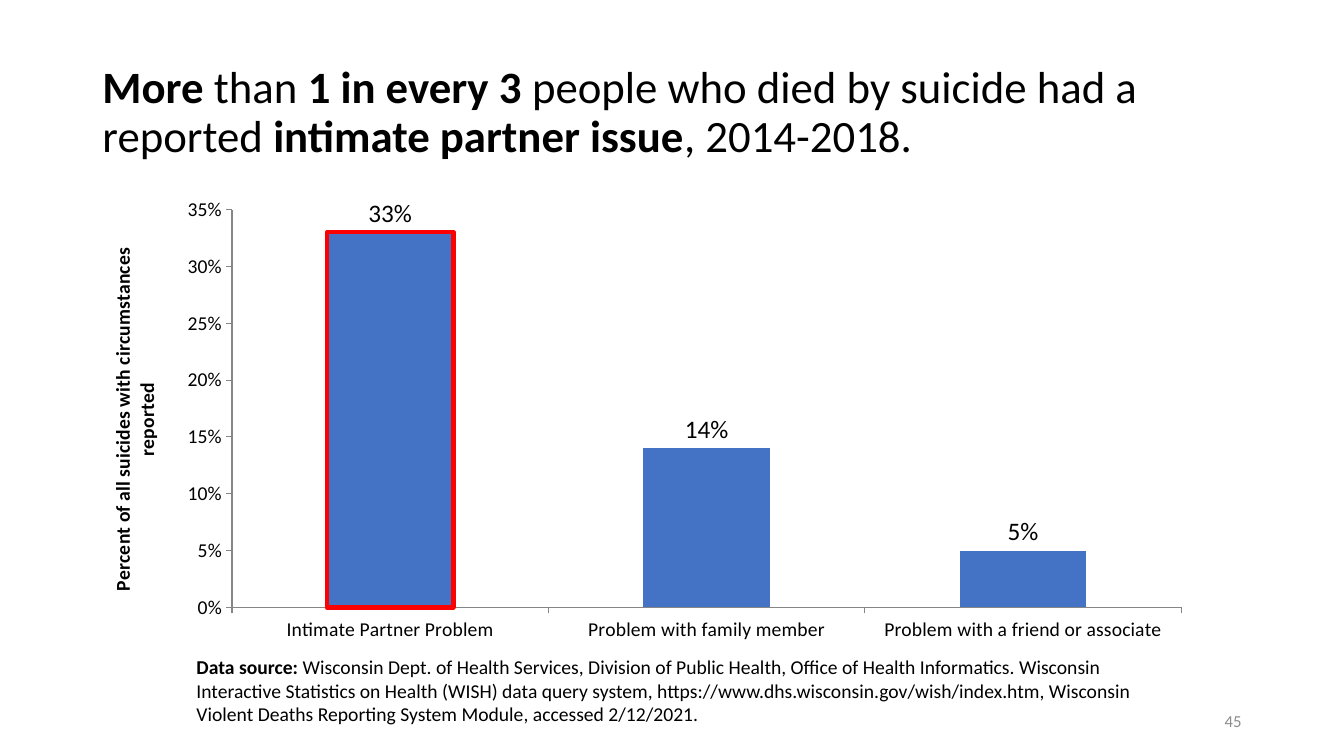
import pptx
import pptx.chart.data
import pptx.dml.color
import pptx.enum.chart
import pptx.enum.text
import pptx.oxml
import pptx.oxml.ns
import pptx.util

Pt = pptx.util.Pt
FONT = "Calibri"
BLACK, GRAY, BLUE, RED, AXIS_GRAY = "000000", "8C8C8C", "4472C4", "FF0000", "868686"


def color(hex_string):
    return pptx.dml.color.RGBColor.from_string(hex_string)


def style_font(font, size, bold=False, hex_color=BLACK):
    font.name = FONT
    font.size = Pt(size)
    font.bold = bold
    font.color.rgb = color(hex_color)


def add_runs(paragraph, runs, size, hex_color=BLACK):
    for text, bold in runs:
        run = paragraph.add_run()
        run.text = text
        style_font(run.font, size, bold, hex_color)


def place(shape, box):
    shape.left, shape.top, shape.width, shape.height = (Pt(length) for length in box)


def build_title(slide, box):
    title = slide.shapes.title
    place(title, box)
    title.text_frame.vertical_anchor = pptx.enum.text.MSO_ANCHOR.MIDDLE
    title.text_frame.word_wrap = True
    paragraph = title.text_frame.paragraphs[0]
    paragraph.alignment = pptx.enum.text.PP_ALIGN.LEFT
    paragraph.line_spacing = 0.9
    add_runs(paragraph, [
        ("More", True),
        (" than ", False),
        ("1 in every 3 ", True),
        ("people who died by suicide had a reported ", False),
        ("intimate partner issue", True),
        (", 2014-2018.", False),
    ], 32)


def set_plot_layout(chart, left, top, width, height):
    """Fix the inner plot area, in fractions of the chart."""
    plot_area = chart.plots[0]._element.getparent()
    for layout in plot_area.findall(pptx.oxml.ns.qn("c:layout")):
        plot_area.remove(layout)
    plot_area.insert(0, pptx.oxml.parse_xml(
        f'<c:layout {pptx.oxml.ns.nsdecls("c")}><c:manualLayout>'
        '<c:layoutTarget val="inner"/><c:xMode val="edge"/><c:yMode val="edge"/>'
        f'<c:x val="{left}"/><c:y val="{top}"/><c:w val="{width}"/><c:h val="{height}"/>'
        '</c:manualLayout></c:layout>'))


def build_chart(slide, box):
    data = pptx.chart.data.CategoryChartData(number_format="0%")
    data.categories = ["Intimate Partner Problem", "Problem with family member",
                       "Problem with a friend or associate"]
    data.add_series("Series 1", [0.33, 0.14, 0.05])
    chart = slide.shapes.add_chart(
        pptx.enum.chart.XL_CHART_TYPE.COLUMN_CLUSTERED,
        *(Pt(length) for length in box), data).chart
    chart.has_legend = False
    chart.has_title = False
    style_font(chart.font, 18)
    set_plot_layout(chart, 0.13, 0.05, 0.85, 0.86)

    # Axes
    for axis in (chart.category_axis, chart.value_axis):
        axis.has_major_gridlines = False
        axis.major_tick_mark = pptx.enum.chart.XL_TICK_MARK.OUTSIDE
        axis.minor_tick_mark = pptx.enum.chart.XL_TICK_MARK.NONE
        axis.format.line.color.rgb = color(AXIS_GRAY)
        axis.format.line.width = Pt(0.75)
        style_font(axis.tick_labels.font, 14)
    value_axis = chart.value_axis
    value_axis.minimum_scale = 0
    value_axis.maximum_scale = 0.35
    value_axis.major_unit = 0.05
    value_axis.tick_labels.number_format = "0%"
    value_axis.tick_labels.number_format_is_linked = False
    add_runs(value_axis.axis_title.text_frame.paragraphs[0],
             [("Percent of all suicides with circumstances reported", True)], 14)

    # Columns, with the first one outlined
    plot = chart.plots[0]
    plot.gap_width = 150
    plot.vary_by_categories = False
    series = plot.series[0]
    series.format.fill.solid()
    series.format.fill.fore_color.rgb = color(BLUE)
    highlight = series.points[0].format
    highlight.fill.solid()
    highlight.fill.fore_color.rgb = color(BLUE)
    highlight.line.color.rgb = color(RED)
    highlight.line.width = Pt(3)

    # Value labels
    labels = series.data_labels
    labels.show_value = True
    labels.position = pptx.enum.chart.XL_LABEL_POSITION.OUTSIDE_END
    labels.number_format = "0%"
    labels.number_format_is_linked = False
    style_font(labels.font, 18)


def build_source(slide, box):
    frame = slide.shapes.add_textbox(*(Pt(length) for length in box)).text_frame
    frame.word_wrap = True
    add_runs(frame.paragraphs[0], [
        ("Data source: ", True),
        ("Wisconsin Dept. of Health Services, Division of Public Health, Office of "
         "Health Informatics. Wisconsin Interactive Statistics on Health (WISH) data "
         "query system, https://www.dhs.wisconsin.gov/wish/index.htm, Wisconsin "
         "Violent Deaths Reporting System Module, accessed 2/12/2021.", False),
    ], 14)


def build_slide_number(slide, box):
    frame = slide.shapes.add_textbox(*(Pt(length) for length in box)).text_frame
    frame.word_wrap = True
    frame.vertical_anchor = pptx.enum.text.MSO_ANCHOR.MIDDLE
    paragraph = frame.paragraphs[0]
    paragraph.alignment = pptx.enum.text.PP_ALIGN.RIGHT
    add_runs(paragraph, [("45", False)], 12, GRAY)


def main():
    presentation = pptx.Presentation()
    presentation.slide_width = Pt(960)
    presentation.slide_height = Pt(540)
    slide = presentation.slides.add_slide(presentation.slide_layouts.get_by_name("Title Only"))
    build_title(slide, (66, 28.75, 828, 104.4))
    build_source(slide, (133.2, 464.4, 692.6, 79.9))
    build_chart(slide, (62, 133.2, 797.8, 330.5))
    build_slide_number(slide, (678, 500.5, 216, 28.75))
    presentation.save("out.pptx")


if __name__ == "__main__":
    main()
